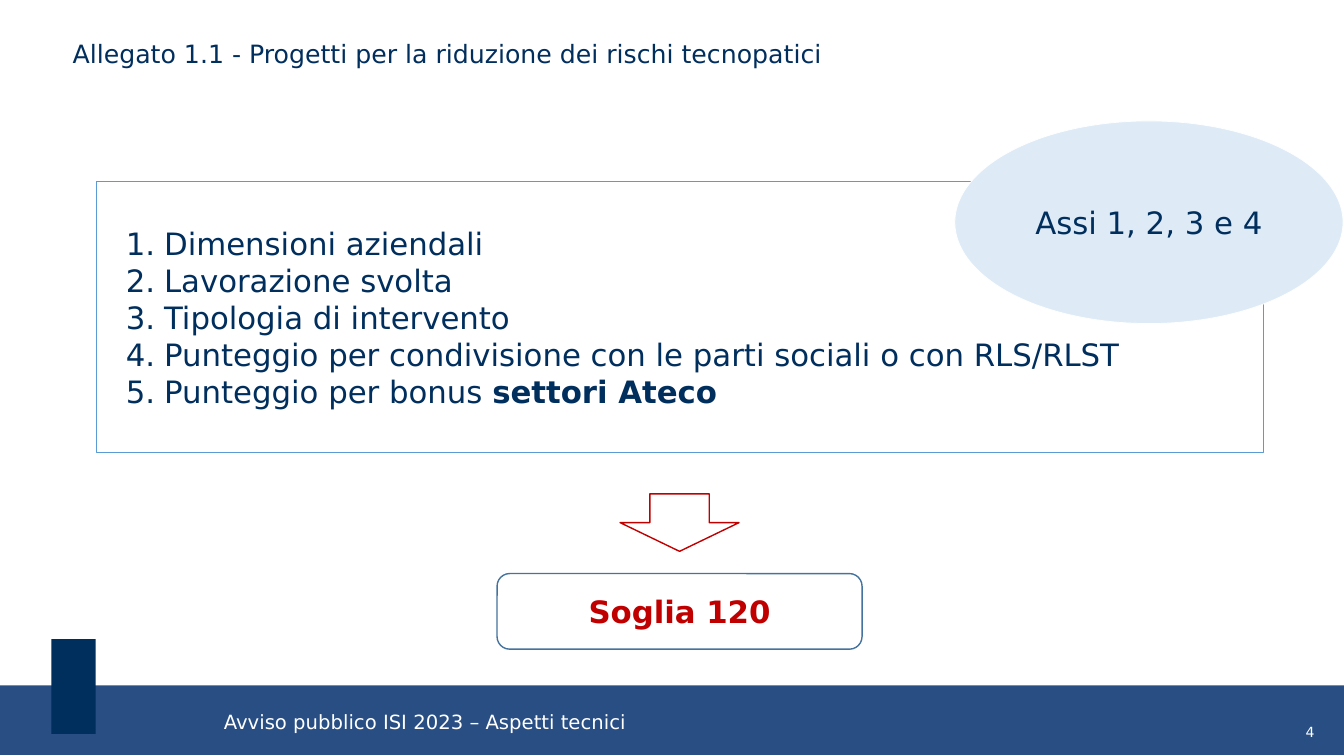
from dataclasses import dataclass
from typing import Any, Optional

import pptx
import pptx.dml.color
import pptx.enum.shapes
import pptx.enum.text
import pptx.oxml
import pptx.oxml.ns
import pptx.util

Inches = pptx.util.Inches
Kind = pptx.enum.shapes.MSO_SHAPE
Align = pptx.enum.text.PP_ALIGN
Anchor = pptx.enum.text.MSO_ANCHOR


@dataclass(frozen=True)
class Theme:
    font: str = "DejaVu Sans"
    navy: str = "002E5D"
    band: str = "284E83"
    red: str = "C00000"
    white: str = "FFFFFF"
    frame: str = "5B9BD5"
    outline: str = "43739E"
    pale: str = "DEEBF7"
    body_size: int = 22
    title_size: int = 18
    footer_size: int = 14
    number_size: int = 10


THEME = Theme()


@dataclass(frozen=True)
class Span:
    text: str
    color: str = THEME.navy
    size: int = THEME.body_size
    bold: bool = False


@dataclass(frozen=True)
class Block:
    kind: Any
    at: tuple[float, float, float, float]
    fill: Optional[str] = None
    line: Optional[str] = None
    line_width: float = 1
    label: Optional[Span] = None


@dataclass(frozen=True)
class Caption:
    at: tuple[float, float, float, float]
    span: Span
    margin: float = 0


BANDS = [
    Block(Kind.RECTANGLE, (0, 6.8, 13.33, 0.69), THEME.band),
    Block(Kind.RECTANGLE, (0.51, 6.34, 0.44, 0.94), THEME.navy),
]
CRITERIA_FRAME = Block(Kind.RECTANGLE, (0.96, 1.8, 11.57, 2.69), THEME.white, THEME.frame)
RESULTS = [
    Block(Kind.ROUNDED_RECTANGLE, (4.93, 5.69, 3.62, 0.75), line=THEME.outline,
          label=Span("Soglia 120", THEME.red, bold=True)),
    Block(Kind.DOWN_ARROW, (6.15, 4.9, 1.18, 0.57), line=THEME.red),
    Block(Kind.OVAL, (9.47, 1.2, 3.85, 2.01), THEME.pale, THEME.white, 0.5,
          Span("Assi 1, 2, 3 e 4")),
]
CRITERIA = [
    [Span("Dimensioni aziendali")],
    [Span("Lavorazione svolta")],
    [Span("Tipologia di intervento")],
    [Span("Punteggio per condivisione con le parti sociali o con RLS/RLST")],
    [Span("Punteggio per bonus "), Span("settori Ateco", bold=True)],
]
TITLE = Caption((0.62, 0.33, 10.28, 0.4),
                Span("Allegato 1.1 - Progetti per la riduzione dei rischi tecnopatici",
                     size=THEME.title_size), 0.1)
FOOTERS = [
    Caption((12.85, 7.13, 0.38, 0.27), Span("4", THEME.white, THEME.number_size), 0.1),
    Caption((2.22, 7.03, 4.06, 0.25),
            Span("Avviso pubblico ISI 2023 – Aspetti tecnici", THEME.white, THEME.footer_size)),
]


def set_all(target: Any, values: dict[str, Any]) -> None:
    for name, value in values.items():
        setattr(target, name, value)


def rgb(color: str) -> pptx.dml.color.RGBColor:
    return pptx.dml.color.RGBColor.from_string(color)


def add_span(para: Any, span: Span) -> None:
    run = para.add_run()
    run.text = span.text
    set_all(run.font, {"name": THEME.font, "size": pptx.util.Pt(span.size), "bold": span.bold})
    run.font.color.rgb = rgb(span.color)


def paint(part: Any, color: Optional[str]) -> None:
    """Fill a shape or line with a colour, or clear it."""
    if color is None:
        part.fill.background()
    else:
        part.fill.solid()
        part.fill.fore_color.rgb = rgb(color)


def add_block(page: Any, block: Block) -> Any:
    box = page.shapes.add_shape(block.kind, *map(Inches, block.at))
    box.shadow.inherit = False
    paint(box, block.fill)
    paint(box.line, block.line)
    if block.line:
        box.line.width = pptx.util.Pt(block.line_width)
    if block.label:
        box.text_frame.vertical_anchor = Anchor.MIDDLE
        para = box.text_frame.paragraphs[0]
        para.alignment = Align.CENTER
        add_span(para, block.label)
    return box


def number_paragraph(para: Any) -> None:
    """Give a paragraph a hanging indent and an automatic number."""
    properties = para._p.get_or_add_pPr()
    properties.set("marL", str(Inches(0.57)))
    properties.set("indent", str(Inches(-0.38)))
    namespace = pptx.oxml.ns.nsdecls("a")
    properties.append(pptx.oxml.parse_xml(f'<a:buFont {namespace} typeface="+mj-lt"/>'))
    properties.append(pptx.oxml.parse_xml(f'<a:buAutoNum {namespace} type="arabicPeriod"/>'))


def add_criteria(page: Any) -> None:
    frame = add_block(page, CRITERIA_FRAME).text_frame
    set_all(frame, {"word_wrap": True, "vertical_anchor": Anchor.MIDDLE})
    for index, spans in enumerate(CRITERIA):
        para = frame.add_paragraph() if index else frame.paragraphs[0]
        para.alignment = Align.LEFT
        number_paragraph(para)
        for span in spans:
            add_span(para, span)


def write_caption(box: Any, caption: Caption, wrap: bool) -> None:
    set_all(box, dict(zip(("left", "top", "width", "height"), map(Inches, caption.at))))
    margin = Inches(caption.margin)
    set_all(box.text_frame, {
        "word_wrap": wrap, "vertical_anchor": Anchor.MIDDLE,
        "auto_size": pptx.enum.text.MSO_AUTO_SIZE.NONE,
        "margin_left": margin, "margin_right": margin, "margin_top": 0, "margin_bottom": 0,
    })
    para = box.text_frame.paragraphs[0]
    para.alignment = Align.LEFT
    add_span(para, caption.span)


def main() -> None:
    deck = pptx.Presentation()
    set_all(deck, {"slide_width": Inches(13.33), "slide_height": Inches(7.5)})
    page = deck.slides.add_slide(deck.slide_layouts.get_by_name("Title Only"))
    write_caption(page.shapes.title, TITLE, True)
    for band in BANDS:
        add_block(page, band)
    add_criteria(page)
    for block in RESULTS:
        add_block(page, block)
    for caption in FOOTERS:
        box = page.shapes.add_textbox(*map(Inches, caption.at))
        write_caption(box, caption, False)
    deck.save("out.pptx")


if __name__ == "__main__":
    main()
